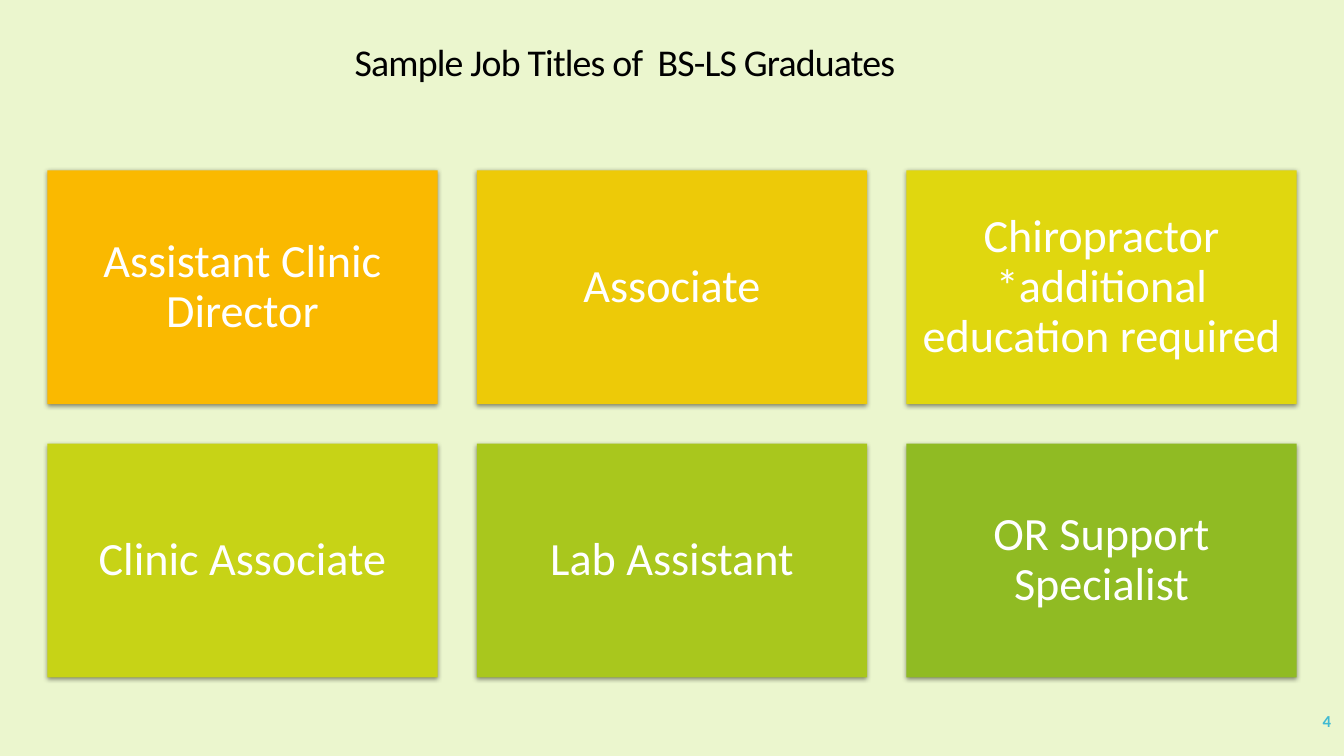
from lxml import etree
from pptx import Presentation
from pptx.dml.color import RGBColor
from pptx.enum.shapes import MSO_SHAPE
from pptx.enum.text import MSO_ANCHOR, PP_ALIGN
from pptx.oxml.ns import qn
from pptx.util import Inches, Pt

RECT = MSO_SHAPE.RECTANGLE
MIDDLE = MSO_ANCHOR.MIDDLE
CENTER, RIGHT = PP_ALIGN.CENTER, PP_ALIGN.RIGHT

JOBS = [
    ("Assistant Clinic Director", "FAB900"),
    ("Associate", "EDCA08"),
    ("Chiropractor *additional education required", "E0D70F"),
    ("Clinic Associate", "C7D316"),
    ("Lab Assistant", "A9C71D"),
    ("OR Support Specialist", "90BB23"),
]


def color(code):
    """Turn a hex string into a colour."""
    return RGBColor.from_string(code)


def write(shape, text, size, code, align=CENTER, bold=False, inset=None, line=0.9):
    """Fill a shape with one formatted paragraph and return its run."""
    frame = shape.text_frame
    form = {"word_wrap": True, "vertical_anchor": MIDDLE}
    if inset is not None:
        for side in ("left", "top", "right", "bottom"):
            form["margin_" + side] = Inches(inset)
    for name, value in form.items():
        setattr(frame, name, value)
    para = frame.paragraphs[0]
    para.alignment, para.line_spacing = align, line
    run = para.add_run()
    run.text = text
    for name, value in {"name": "Calibri", "size": Pt(size), "bold": bold}.items():
        setattr(run.font, name, value)
    run.font.color.rgb = color(code)
    return run


def shade(shape):
    """Give a shape a soft shadow straight below it."""
    shape.shadow.inherit = False
    effects = shape._element.spPr.find(qn("a:effectLst"))
    form = {"blurRad": Pt(3.5), "dist": Pt(1.1), "dir": 90 * 60000,
            "algn": "ctr", "rotWithShape": 0}
    outer = etree.SubElement(effects, qn("a:outerShdw"),
                             {key: str(value) for key, value in form.items()})
    black = etree.SubElement(outer, qn("a:srgbClr"), val="000000")
    etree.SubElement(black, qn("a:alpha"), val="45000")


def add_title(slide, left, top, width, height):
    """Place the slide title in its box."""
    box = slide.shapes.add_textbox(*map(Inches, (left, top, width, height)))
    run = write(box, "Sample Job Titles of  BS-LS Graduates", 27, "000000")
    run.font._element.set("spc", "-60")


def add_jobs(slide, left, top, width, height, cols=3, rows=2, gap=0.39):
    """Lay the job tiles out as an even grid in the box."""
    wide = (width - gap * (cols - 1)) / cols
    high = (height - gap * (rows - 1)) / rows
    for index, (job, fill) in enumerate(JOBS):
        row, col = divmod(index, cols)
        spot = (left + col * (wide + gap), top + row * (high + gap), wide, high)
        tile = slide.shapes.add_shape(RECT, *map(Inches, spot))
        tile.fill.solid()
        tile.fill.fore_color.rgb = color(fill)
        tile.line.fill.background()
        shade(tile)
        write(tile, job, 33, "FFFFFF", inset=0.14)


def add_number(slide, left, top, width, height):
    """Place the slide number in its box."""
    box = slide.shapes.add_textbox(*map(Inches, (left, top, width, height)))
    write(box, "4", 12, "40BAD2", RIGHT, True, line=1.0)


def main():
    """Build and save the slide."""
    deck = Presentation()
    deck.slide_width, deck.slide_height = Inches(13.33), Inches(7.5)
    slide = deck.slides.add_slide(deck.slide_layouts[6])
    slide.background.fill.solid()
    slide.background.fill.fore_color.rgb = color("EBF6CE")
    add_number(slide, 11.63, 6.95, 1.67, 0.4)
    add_title(slide, 0, 0.4, 12.39, 0.47)
    add_jobs(slide, 0.47, 1.69, 12.39, 5.03)
    deck.save("out.pptx")


if __name__ == "__main__":
    main()
